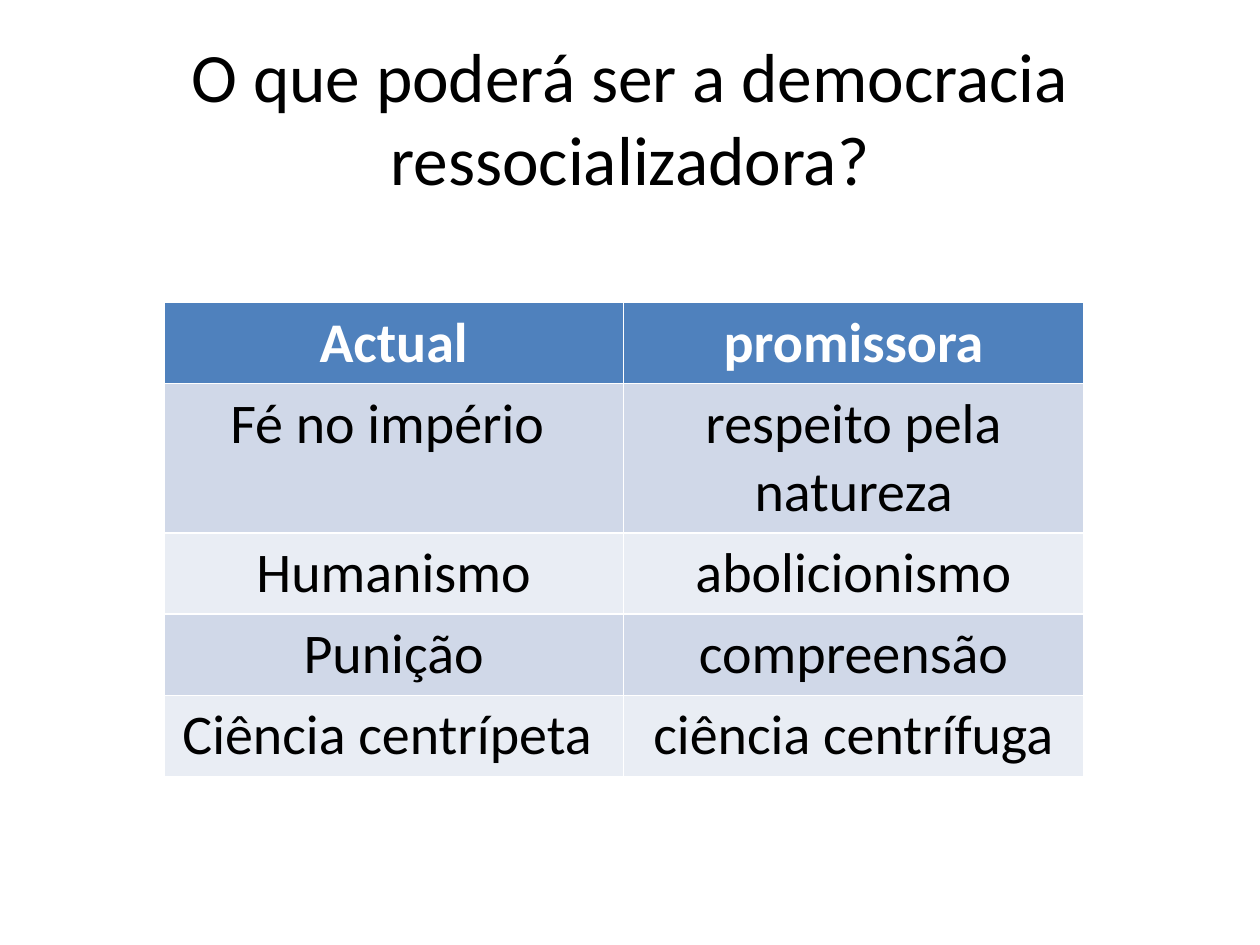
from dataclasses import dataclass

from pptx import Presentation
from pptx.dml.color import RGBColor
from pptx.enum.text import MSO_ANCHOR, PP_ALIGN
from pptx.slide import Slide
from pptx.util import Inches, Pt

WIDTH, HEIGHT = Inches(10), Inches(7.5)
TITLE = "O que poderá ser a democracia ressocializadora?"
COMPARISON = [
    ("Actual", "promissora"),
    ("Fé no império ", "respeito pela natureza"),
    ("Humanismo", "abolicionismo"),
    ("Punição", "compreensão"),
    ("Ciência centrípeta ", "ciência centrífuga"),
]


def color(hex_string):
    return RGBColor.from_string(hex_string)


@dataclass
class SlideBuilder:
    slide: Slide
    font: str = "Calibri"
    ink: str = "000000"
    header_ink: str = "FFFFFF"
    header_fill: str = "4F81BD"
    bands: tuple = ("D0D8E8", "E9EDF4")

    def box(self, left, top, width, height):
        """Turn shares of the slide's size into lengths."""
        return (int(left * WIDTH), int(top * HEIGHT),
                int(width * WIDTH), int(height * HEIGHT))

    def add_text(self, text_frame, text, size, ink, bold=False):
        paragraph = text_frame.paragraphs[0]
        paragraph.alignment = PP_ALIGN.CENTER
        run = paragraph.add_run()
        run.text = text
        run.font.name = self.font
        run.font.size = Pt(size)
        run.font.bold = bold
        run.font.color.rgb = color(ink)

    def title(self, text, box, size=39.6):
        shape = self.slide.shapes.title
        shape.left, shape.top, shape.width, shape.height = self.box(*box)
        shape.text_frame.word_wrap = True
        shape.text_frame.vertical_anchor = MSO_ANCHOR.MIDDLE
        self.add_text(shape.text_frame, text, size, self.ink)

    def table(self, rows, box, size=32):
        """Add a header row and banded rows, which grow to fit their text."""
        table = self.slide.shapes.add_table(
            len(rows), len(rows[0]), *self.box(*box)).table
        for row_index, row in enumerate(rows):
            header = row_index == 0
            fill = self.header_fill if header else self.bands[(row_index - 1) % 2]
            ink = self.header_ink if header else self.ink
            for column_index, text in enumerate(row):
                cell = table.cell(row_index, column_index)
                cell.fill.solid()
                cell.fill.fore_color.rgb = color(fill)
                self.add_text(cell.text_frame, text, size, ink, header)


def main():
    presentation = Presentation()
    presentation.slide_width, presentation.slide_height = WIDTH, HEIGHT
    title_only = presentation.slide_layouts.get_by_name("Title Only")
    builder = SlideBuilder(presentation.slides.add_slide(title_only))
    builder.title(TITLE, (0.05, 0.04, 0.9, 1 / 6))
    builder.table(COMPARISON, (0.13, 0.32, 0.73, 0.27))
    presentation.save("out.pptx")


if __name__ == "__main__":
    main()
